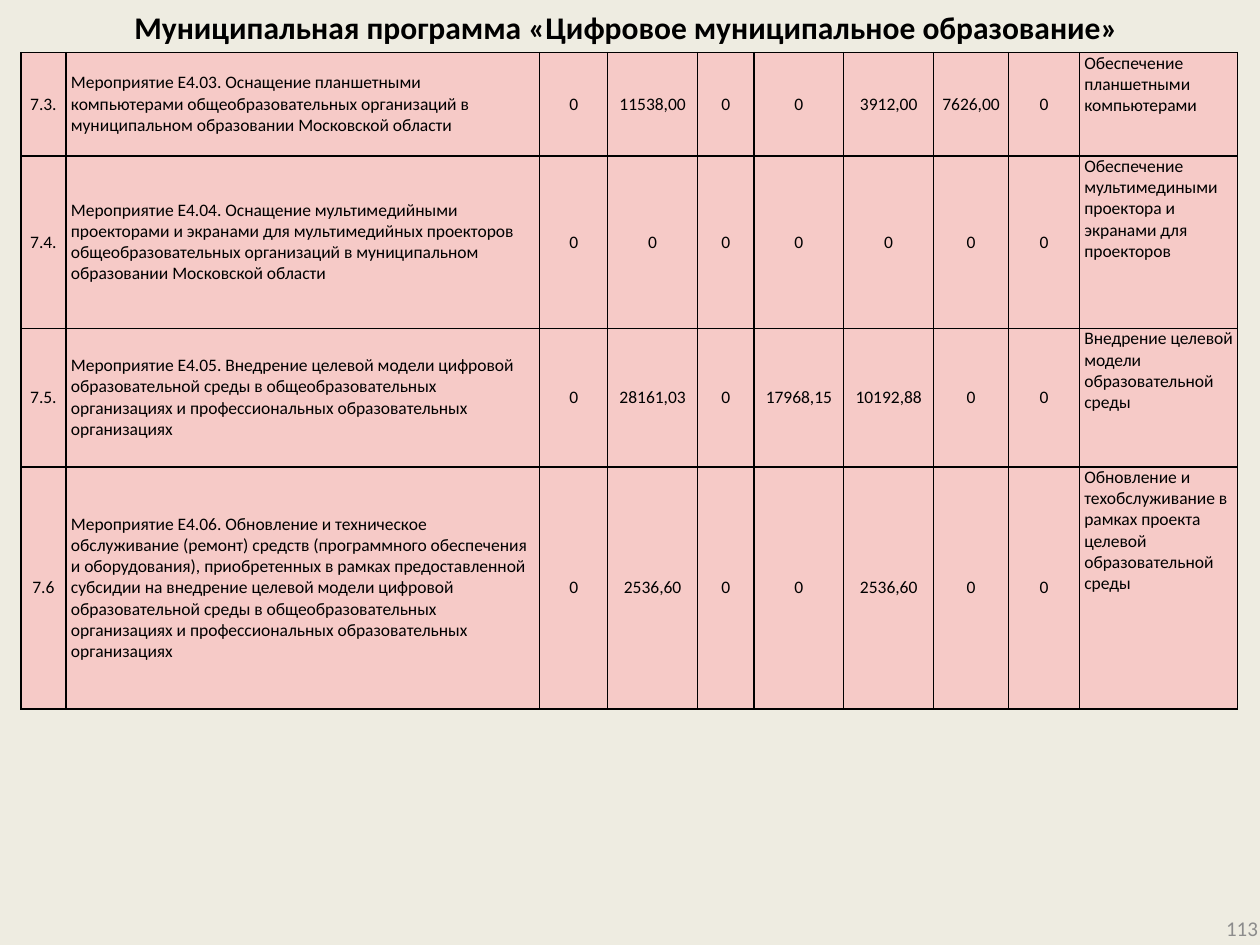
from lxml import etree
from pptx import Presentation
from pptx.dml.color import RGBColor
from pptx.enum.text import MSO_ANCHOR, PP_ALIGN
from pptx.oxml import parse_xml
from pptx.oxml.ns import nsdecls, qn
from pptx.util import Cm, Pt

LEFT, CENTER, RIGHT = PP_ALIGN.LEFT, PP_ALIGN.CENTER, PP_ALIGN.RIGHT
TOP, MIDDLE = MSO_ANCHOR.TOP, MSO_ANCHOR.MIDDLE

TITLE = "Муниципальная программа «Цифровое муниципальное образование» "
PAGE = "113"
# number, measure, amounts, expected result
MEASURES = [
    ("7.3.",
     "Мероприятие E4.03. Оснащение планшетными компьютерами общеобразовательных "
     "организаций в муниципальном образовании Московской области",
     "0", "11538,00", "0", "0", "3912,00", "7626,00", "0",
     "Обеспечение планшетными компьютерами"),
    ("7.4.",
     "Мероприятие E4.04. Оснащение мультимедийными проекторами и экранами для "
     "мультимедийных проекторов общеобразовательных организаций в муниципальном "
     "образовании Московской области",
     "0", "0", "0", "0", "0", "0", "0",
     "Обеспечение мультимедиными проектора и экранами для проекторов"),
    ("7.5.",
     "Мероприятие E4.05. Внедрение целевой модели цифровой образовательной среды в "
     "общеобразовательных организациях и профессиональных образовательных организациях",
     "0", "28161,03", "0", "17968,15", "10192,88", "0", "0",
     "Внедрение целевой модели образовательной среды"),
    ("7.6",
     "Мероприятие E4.06. Обновление и техническое обслуживание (ремонт) средств "
     "(программного обеспечения и оборудования), приобретенных в рамках предоставленной "
     "субсидии на внедрение целевой модели цифровой образовательной среды в "
     "общеобразовательных организациях и профессиональных образовательных организациях",
     "0", "2536,60", "0", "0", "2536,60", "0", "0",
     "Обновление и техобслуживание в рамках проекта целевой образовательной среды"),
]
COL_WIDTHS = [0.91, 9.55, 1.37, 1.81, 1.14, 1.81, 1.81, 1.51, 1.43, 3.19]
ROW_HEIGHTS = [2.08, 3.48, 2.79, 4.88]
MEASURE_COL, RESULT_COL = 1, len(COL_WIDTHS) - 1
CELL_MARGINS = {"margin_left": Cm(0.1), "margin_right": Cm(0.1),
                "margin_top": 0, "margin_bottom": 0}


def rgb(value):
    return RGBColor.from_string(value)


def write(tf, text, size, color="000000", align=LEFT, bold=False):
    p = tf.paragraphs[0]
    p.alignment = align
    r = p.add_run()
    r.text = text
    r.font.color.rgb = rgb(color)
    for name, value in {"name": "Calibri", "size": Pt(size), "bold": bold}.items():
        setattr(r.font, name, value)


def paint(cell, color, opacity):
    """Fill a cell with a translucent colour and rule its four edges."""
    cell.fill.solid()
    cell.fill.fore_color.rgb = rgb(color)
    tc_pr = cell._tc.get_or_add_tcPr()
    alpha = etree.SubElement(tc_pr.find(".//" + qn("a:srgbClr")), qn("a:alpha"))
    alpha.set("val", str(opacity * 1000))
    for i, edge in enumerate("LRTB"):
        tc_pr.insert(i, parse_xml(
            f'<a:ln{edge} {nsdecls("a")} w="{Pt(1)}"><a:solidFill>'
            f'<a:srgbClr val="000000"/></a:solidFill></a:ln{edge}>'))


def add_measures(slide):
    sp = slide.shapes.add_table(len(MEASURES), len(COL_WIDTHS), Cm(0.42), Cm(1.06),
                                Cm(sum(COL_WIDTHS)), Cm(sum(ROW_HEIGHTS)))
    table = sp.table
    table.first_row = table.horz_banding = False
    for column, width in zip(table.columns, COL_WIDTHS):
        column.width = Cm(width)
    for row, height, measure in zip(table.rows, ROW_HEIGHTS, MEASURES):
        row.height = Cm(height)
        for i, (cell, text) in enumerate(zip(row.cells, measure)):
            for name, value in CELL_MARGINS.items():
                setattr(cell, name, value)
            cell.vertical_anchor = TOP if i == RESULT_COL else MIDDLE
            align = LEFT if i in (MEASURE_COL, RESULT_COL) else CENTER
            write(cell.text_frame, text, 10, align=align)
            paint(cell, "FABCBC", 70)


def place(sp, left, top, width, height):
    sp.left, sp.top, sp.width, sp.height = map(Cm, (left, top, width, height))
    sp.text_frame.word_wrap = True
    sp.text_frame.vertical_anchor = MIDDLE


def main():
    prs = Presentation()
    prs.slide_width, prs.slide_height = Cm(25.4), Cm(19.05)
    slide = prs.slides.add_slide(prs.slide_layouts[5])
    slide.background.fill.solid()
    slide.background.fill.fore_color.rgb = rgb("EEECE1")

    add_measures(slide)

    title = slide.shapes.title
    place(title, 1.27, 0.03, 22.86, 1.04)
    write(title.text_frame, TITLE, 18, align=CENTER, bold=True)

    page = slide.shapes.add_textbox(0, 0, 0, 0)
    place(page, 19.69, 18.21, 5.92, 1.02)
    write(page.text_frame, PAGE, 12, color="8C8C8C", align=RIGHT)

    prs.save("out.pptx")


if __name__ == "__main__":
    main()
